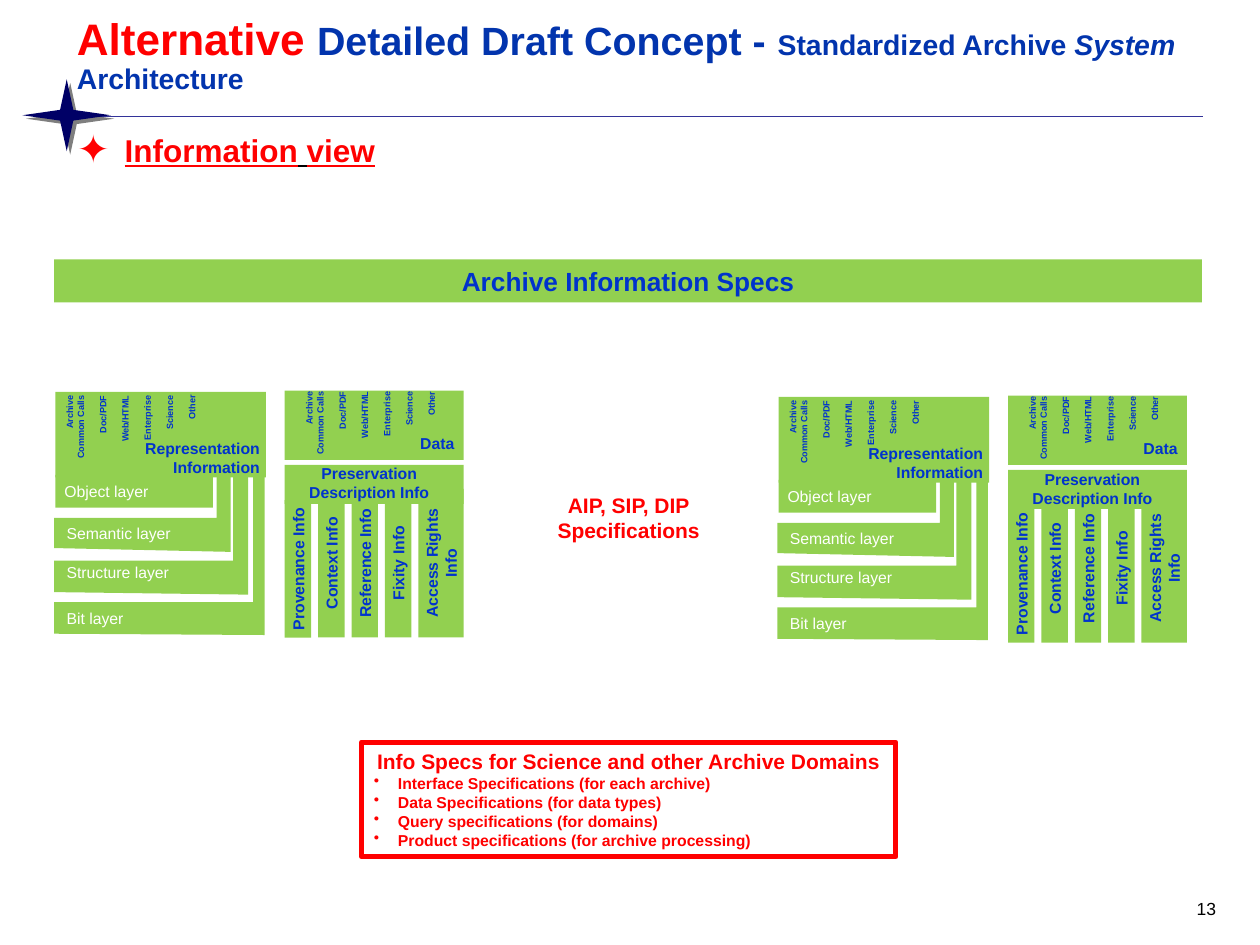
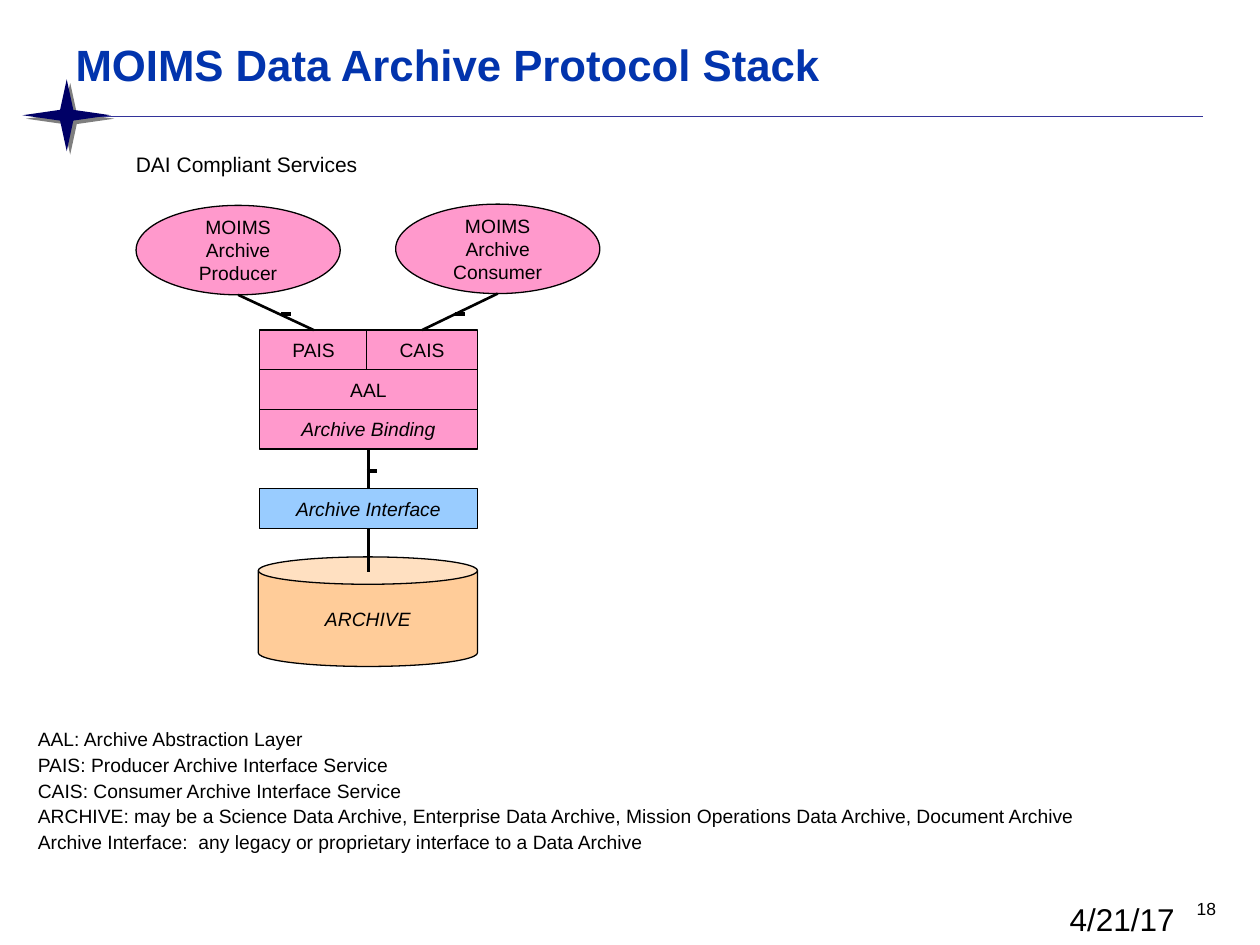
from lxml.etree import SubElement
from pptx import Presentation
from pptx.dml.color import RGBColor
from pptx.enum.shapes import MSO_CONNECTOR, MSO_SHAPE
from pptx.enum.text import MSO_ANCHOR, MSO_AUTO_SIZE, PP_ALIGN
from pptx.oxml.ns import qn
from pptx.util import Inches, Pt

FONT = "Arial"
BLACK, WHITE, RED = "000000", "FFFFFF", "FF0000"
TITLE_BLUE, LABEL_BLUE, NAVY, RULE = "0234AD", "0033CC", "000066", "333399"
GREEN, PINK, SKY, PEACH = "92D050", "FF99CC", "99CCFF", "FFCC99"
LEFT, CENTER, RIGHT = PP_ALIGN.LEFT, PP_ALIGN.CENTER, PP_ALIGN.RIGHT
TOP, MIDDLE = MSO_ANCHOR.TOP, MSO_ANCHOR.MIDDLE

INFO_TITLE = [
    ("Alternative ", 25.2, RED, {}),
    ("Detailed Draft Concept - ", 22.5, TITLE_BLUE, {}),
    ("Standardized Archive ", 16.2, TITLE_BLUE, {}),
    ("System", 16.2, TITLE_BLUE, {"italic": True}),
    (" Architecture", 16.2, TITLE_BLUE, {}),
]
INFO_VIEW = [
    ("Information", 18, RED, {"underline": True}),
    (" ", 18, BLACK, {"underline": True}),
    ("view", 18, RED, {"underline": True}),
]
CLUSTER_OFFSETS = [(0, 0), (5.74, 0.04)]
LAYER_LEFT, LAYER_TIP = 0.43, 3.76
LAYERS = [
    ("Semantic layer", 4.11, 4.35, 4.38, 1.72, 1.83, 4.1),
    ("Structure layer", 4.45, 4.70, 4.72, 1.85, 1.97, 4.41),
    ("Bit layer", 4.78, 5.03, 5.04, 2.01, 2.10, 4.78),
]
PDI_LEFT, PDI_PITCH, PDI_BOTTOM = 2.26, 0.265, 5.06
PDI_COLUMNS = [
    ("Provenance Info", 3.97, 0.21),
    ("Context Info", 3.88, 0.21),
    ("Reference Info", 3.88, 0.21),
    ("Fixity Info", 3.88, 0.21),
    ("Access Rights Info", 3.88, 0.36),
]
DATA_KINDS = ["Archive", "Common Calls", "Doc/PDF", "Web/HTML",
              "Enterprise", "Science", "Other"]
DOMAIN_HEADING = "Info Specs for Science and other Archive Domains"
DOMAIN_SPECS = [
    "Interface Specifications (for each archive)",
    "Data Specifications (for data types)",
    "Query specifications (for domains)",
    "Product specifications (for archive processing)",
]

STACK_TITLE = [("MOIMS Data Archive Protocol Stack", 25, TITLE_BLUE, {})]
STACK_LEFT, STACK_TOP, STACK_WIDTH, STACK_ROW = 2.06, 2.62, 1.73, 0.315
STACK = [
    ("PAIS", 0, 0, 0.86, PINK, False),
    ("CAIS", 0, 0.85, 0.88, PINK, False),
    ("AAL", 1, 0, STACK_WIDTH, PINK, False),
    ("Archive Binding", 2, 0, STACK_WIDTH, PINK, True),
    ("Archive Interface", 4, 0, STACK_WIDTH, SKY, True),
]
USERS = [("Archive Producer", 1.08, 1.63, "PAIS"),
         ("Archive Consumer", 3.14, 1.62, "CAIS")]
USER_WIDTH, USER_HEIGHT = 1.62, 0.71
TICKS = [(2.23, 2.49), (3.61, 2.49), (2.91, 3.74)]
GLOSSARY = [
    "AAL: Archive Abstraction Layer",
    "PAIS: Producer Archive Interface Service",
    "CAIS: Consumer Archive Interface Service",
    "ARCHIVE: may be a Science Data Archive, Enterprise Data Archive, "
    "Mission Operations Data Archive, Document Archive",
    "Archive Interface:  any legacy or proprietary interface to a Data Archive",
]


def rgb(color):
    return RGBColor.from_string(color)


def inches(box):
    return [Inches(length) for length in box]


def style(run, size, color, bold=False, italic=False, underline=False):
    font = run.font
    font.name, font.size = FONT, Pt(size)
    font.bold, font.italic, font.underline = bold, italic, underline
    font.color.rgb = rgb(color)


def frame(shape, inset=(0.1, 0.05), anchor=TOP, wrap=True):
    text = shape.text_frame
    text.auto_size = MSO_AUTO_SIZE.NONE
    text.word_wrap, text.vertical_anchor = wrap, anchor
    text.margin_left = text.margin_right = Inches(inset[0])
    text.margin_top = text.margin_bottom = Inches(inset[1])
    return text


def write(shape, lines, size, color, align=LEFT, bold=False, italic=False, **layout):
    text = frame(shape, **layout)
    text.text = "\n".join(lines)
    for paragraph in text.paragraphs:
        paragraph.alignment = align
        for run in paragraph.runs:
            style(run, size, color, bold, italic)
    return text


def write_runs(paragraph, parts):
    for words, size, color, extra in parts:
        run = paragraph.add_run()
        run.text = words
        style(run, size, color, bold=True, **extra)


def set_bullet(paragraph, mark, indent, percent=100):
    props = paragraph._p.get_or_add_pPr()
    props.set("marL", str(Inches(indent)))
    props.set("indent", str(-Inches(indent)))
    if mark:
        SubElement(props, qn("a:buSzPct"), val=str(percent * 1000))
        SubElement(props, qn("a:buChar"), char=mark)
    else:
        SubElement(props, qn("a:buNone"))


def paint(shape, fill=None, line=None, width=0.75):
    shape.shadow.inherit = False
    if fill:
        shape.fill.solid()
        shape.fill.fore_color.rgb = rgb(fill)
    else:
        shape.fill.background()
    if line:
        shape.line.color.rgb = rgb(line)
        shape.line.width = Pt(width)
    else:
        shape.line.fill.background()
    return shape


def add_block(slide, kind, box, fill=None, line=None, width=0.75):
    return paint(slide.shapes.add_shape(kind, *inches(box)), fill, line, width)


def add_label(slide, box, lines, size, color, **options):
    label = slide.shapes.add_textbox(*inches(box))
    write(label, lines, size, color, **options)
    return label


def add_line(slide, start, end, color=BLACK, width=1.5):
    line = slide.shapes.add_connector(MSO_CONNECTOR.STRAIGHT, *inches(start + end))
    line.line.color.rgb = rgb(color)
    line.line.width = Pt(width)
    SubElement(line.element.spPr, qn("a:effectLst"))
    return line


def decorate_layout(slide):
    rule = add_line(slide, (0.53, 0.92), (9.55, 0.92), RULE, 0.13)
    star = add_block(slide, MSO_SHAPE.STAR_4_POINT, (0.18, 0.63, 0.7, 0.57), NAVY)
    star.adjustments[0] = 0.106
    effects = star.element.spPr.find(qn("a:effectLst"))
    shadow = SubElement(effects, qn("a:outerShdw"), blurRad="0",
                        dist=str(Pt(2.8)), dir=str(45 * 60000))
    shade = SubElement(shadow, qn("a:srgbClr"), val=BLACK)
    SubElement(shade, qn("a:alpha"), val="50000")
    for position, part in enumerate((rule, star), start=2):
        slide.slide_layout.shapes.element.insert(position, part.element)


def place(holder, box):
    holder.left, holder.top, holder.width, holder.height = inches(box)


def add_slide(deck, title_parts, title_box, body_box, number):
    slide = deck.slides.add_slide(deck.slide_layouts[1])
    title, body = slide.shapes.title, slide.placeholders[1]
    place(title, title_box)
    place(body, body_box)
    heading = frame(title).paragraphs[0]
    heading.alignment, heading.line_spacing = LEFT, 0.9
    write_runs(heading, title_parts)
    add_label(slide, (7.42, 7.08, 2.33, 0.25), [number], 10, BLACK, align=RIGHT)
    return slide, body


def add_data_kinds(slide, box):
    kinds = add_label(slide, box, DATA_KINDS, 5.2, LABEL_BLUE,
                      align=RIGHT, bold=True, wrap=False)
    kinds.rotation = 270
    for paragraph in kinds.text_frame.paragraphs[2:]:
        paragraph.space_before = Pt(6.5)


def add_cluster(slide, dx, dy):
    def at(left, top, width, height):
        return left + dx, top + dy, width, height

    def name(box, lines, align=CENTER, **options):
        add_label(slide, at(*box), lines, 9, LABEL_BLUE, align=align,
                  bold=True, anchor=MIDDLE, **options)

    for _, top, low_left, low_right, inner, outer, _ in LAYERS:
        corners = [(LAYER_LEFT, top), (LAYER_LEFT, low_left), (outer, low_right),
                   (outer, LAYER_TIP), (inner, LAYER_TIP), (inner, top)]
        points = [(Inches(x + dx), Inches(y + dy)) for x, y in corners]
        outline = slide.shapes.build_freeform(*points[0])
        outline.add_line_segments(points[1:], close=True)
        paint(outline.convert_to_shape(), GREEN)
    for layer in LAYERS:
        add_label(slide, at(LAYER_LEFT, layer[-1], 1.31, 0.26), [layer[0]],
                  9, WHITE, anchor=MIDDLE)
    object_layer = add_block(slide, MSO_SHAPE.RECTANGLE, at(0.44, 3.77, 1.25, 0.26), GREEN)
    write(object_layer, ["Object layer"], 9, WHITE, anchor=MIDDLE, inset=(0.07, 0.04))

    for box in [(0.44, 3.11, 1.67, 0.68), (2.26, 3.1, 1.42, 0.55), (2.26, 3.69, 1.42, 0.31)]:
        add_block(slide, MSO_SHAPE.RECTANGLE, at(*box), GREEN)
    for index, (info, top, width) in enumerate(PDI_COLUMNS):
        box = at(PDI_LEFT + index * PDI_PITCH, top, width, PDI_BOTTOM - top)
        column = add_block(slide, MSO_SHAPE.RECTANGLE, box, GREEN)
        write(column, [info], 9, LABEL_BLUE, align=CENTER, bold=True, inset=(0.03, 0.03))
        column.element.txBody.bodyPr.set("vert", "vert270")

    add_data_kinds(slide, at(0.68, 2.82, 0.72, 1.16))
    add_data_kinds(slide, at(2.58, 2.79, 0.72, 1.16))
    name((0.94, 3.45, 1.22, 0.37), ["Representation Information"], RIGHT)
    name((3.23, 3.43, 0.48, 0.17), ["Data"], wrap=False, inset=(0, 0))
    name((2.29, 3.65, 1.28, 0.37), ["Preservation", "Description Info"])


def build_information_view(deck):
    slide, body = add_slide(deck, INFO_TITLE, (0.51, 0.09, 9.5, 0.62),
                            (0.51, 0.99, 9, 5.62), "13")
    decorate_layout(slide)
    view = frame(body).paragraphs[0]
    view.space_before = Pt(0)
    write_runs(view, INFO_VIEW)
    set_bullet(view, "✦", 0.38, 125)

    band = add_block(slide, MSO_SHAPE.RECTANGLE, (0.43, 2.06, 9.11, 0.34), GREEN)
    write(band, ["Archive Information Specs"], 15, LABEL_BLUE,
          align=CENTER, bold=True, anchor=MIDDLE)
    for dx, dy in CLUSTER_OFFSETS:
        add_cluster(slide, dx, dy)
    add_label(slide, (4.32, 3.86, 1.34, 0.5), ["AIP, SIP, DIP", "Specifications"],
              12, RED, align=CENTER, bold=True, wrap=False)

    domains = add_block(slide, MSO_SHAPE.RECTANGLE, (2.87, 5.89, 4.24, 0.91), line=RED, width=3)
    text = write(domains, [DOMAIN_HEADING] + DOMAIN_SPECS, 9, RED, bold=True)
    heading, *specs = text.paragraphs
    heading.alignment = CENTER
    heading.runs[0].font.size = Pt(12)
    for spec in specs:
        set_bullet(spec, "•", 0.19)


def build_protocol_stack(deck):
    slide, body = add_slide(deck, STACK_TITLE, (0.5, 0.3, 9, 0.62),
                            (0.2, 5.72, 9.69, 1.1), "18")
    for entry in write(body, GLOSSARY, 11, BLACK).paragraphs:
        entry.space_before, entry.space_after = Pt(0), Pt(1.6)
        set_bullet(entry, None, 0)
    add_label(slide, (8.39, 7.09, 1.1, 0.32), ["4/21/17"], 18, BLACK)
    add_label(slide, (0.98, 1.15, 2.15, 0.3), ["DAI Compliant Services"], 12, BLACK, wrap=False)

    archive = add_block(slide, MSO_SHAPE.CAN, (2.05, 4.42, 1.74, 0.87), PEACH, BLACK)
    write(archive, ["ARCHIVE"], 11, BLACK, align=CENTER, italic=True,
          anchor=MIDDLE, inset=(0.02, 0.02))
    stack = {}
    for layer, row, shift, width, fill, italic in STACK:
        box = (STACK_LEFT + shift, STACK_TOP + row * STACK_ROW, width, STACK_ROW)
        stack[layer] = add_block(slide, MSO_SHAPE.RECTANGLE, box, fill, BLACK)
        write(stack[layer], [layer], 11, BLACK, align=CENTER, italic=italic,
              anchor=MIDDLE, inset=(0.02, 0.02))

    for user, left, top, service in USERS:
        oval = add_block(slide, MSO_SHAPE.OVAL, (left, top, USER_WIDTH, USER_HEIGHT), PINK, BLACK)
        write(oval, ["MOIMS", user], 11, BLACK, align=CENTER, anchor=MIDDLE, inset=(0, 0.05))
        foot = (left + USER_WIDTH / 2, top + USER_HEIGHT)
        add_line(slide, foot, foot).end_connect(stack[service], 0)

    middle = STACK_LEFT + STACK_WIDTH / 2
    binding_link = add_line(slide, (middle, 3.57), (middle, 3.88))
    binding_link.begin_connect(stack["Archive Binding"], 2)
    binding_link.end_connect(stack["Archive Interface"], 0)
    archive_link = add_line(slide, (middle, 4.2), (middle, 4.54))
    archive_link.begin_connect(stack["Archive Interface"], 2)
    for x, y in TICKS:
        add_line(slide, (x, y), (x + 0.08, y), width=2.25)


def main():
    deck = Presentation()
    deck.slide_width, deck.slide_height = Inches(10), Inches(7.5)
    build_information_view(deck)
    build_protocol_stack(deck)
    deck.save("out.pptx")


if __name__ == "__main__":
    main()
